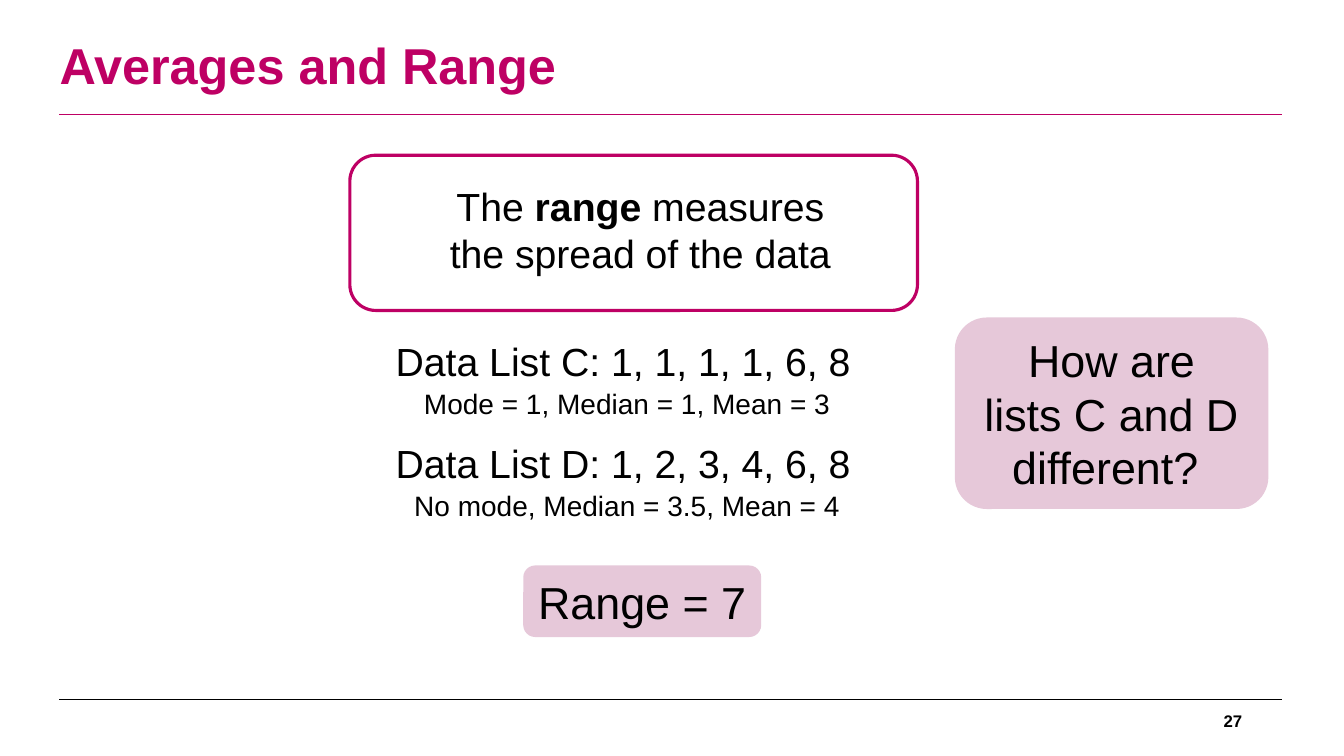
"""Build the Averages and Range slide."""
from lxml import etree
from pptx import Presentation, util as u
from pptx.dml.color import RGBColor
from pptx.enum import shapes, text
from pptx.oxml.ns import qn

MAGENTA = RGBColor(0xBE, 0x00, 0x64)
PINK = RGBColor(0xE6, 0xC8, 0xD9)
BLACK = RGBColor(0, 0, 0)
WHITE = RGBColor(255, 255, 255)
FONT = "Arial"
WIDTH, HEIGHT = 13.33, 7.5
MARGIN = 0.59

TITLE = "Averages and Range"
DEFINITION = [[("The ", False), ("range", True), (" measures", False)],
              [("the spread of the data", False)]]
DATA_LISTS = [("Data List C: 1, 1, 1, 1, 6, 8", "Mode = 1, Median = 1, Mean = 3"),
              ("Data List D: 1, 2, 3, 4, 6, 8", "No mode, Median = 3.5, Mean = 4")]
CALLOUTS = [("Range = 7", (5.19, 5.61, 2.36, 0.71)),
            ("How are\vlists C and D\vdifferent? ", (9.47, 3.15, 3.11, 1.9))]
RULES = [(1.14, MAGENTA), (6.94, BLACK)]
PAGE_NUMBER = "27"
LIST_TOP, LIST_PITCH, DETAIL_DROP = 3.35, 1.01, 0.47

CENTER, RIGHT, LEFT = text.PP_ALIGN.CENTER, text.PP_ALIGN.RIGHT, text.PP_ALIGN.LEFT
MIDDLE, TOP = text.MSO_ANCHOR.MIDDLE, text.MSO_ANCHOR.TOP


def write(shape, lines, size, color=BLACK, align=CENTER, anchor=TOP, spacing=1.0):
    frame = shape.text_frame
    frame.word_wrap = True
    frame.auto_size = text.MSO_AUTO_SIZE.NONE
    frame.vertical_anchor = anchor
    for index, runs in enumerate(lines):
        paragraph = frame.add_paragraph() if index else frame.paragraphs[0]
        paragraph.alignment = align
        paragraph.line_spacing = spacing
        for words, bold in runs:
            for part_index, part in enumerate(words.split("\v")):
                if part_index:
                    paragraph.add_line_break()
                run = paragraph.add_run()
                run.text = part
                run.font.name = FONT
                run.font.size = u.Pt(size)
                run.font.bold = bold
                run.font.color.rgb = color


def add_text(slide, box, lines, size, **options):
    write(slide.shapes.add_textbox(*map(u.Inches, box)), lines, size, **options)


def add_rounded(slide, box, fill=None, line=None):
    shape = slide.shapes.add_shape(shapes.MSO_SHAPE.ROUNDED_RECTANGLE, *map(u.Inches, box))
    shape.shadow.inherit = False
    if fill is None:
        shape.fill.background()
    else:
        shape.fill.solid()
        shape.fill.fore_color.rgb = fill
    if line is None:
        shape.line.fill.background()
    else:
        shape.line.color.rgb = line
        shape.line.width = u.Pt(2.25)
    return shape


def add_rule(slide, top, color):
    rule = slide.shapes.add_connector(
        shapes.MSO_CONNECTOR.STRAIGHT,
        *map(u.Inches, (MARGIN, top, WIDTH - MARGIN - 0.02, top)))
    rule.line.color.rgb = color
    rule.line.width = u.Pt(0.75)
    etree.SubElement(rule._element.spPr, qn("a:effectLst"))


def main():
    presentation = Presentation()
    presentation.slide_width, presentation.slide_height = u.Inches(WIDTH), u.Inches(HEIGHT)
    slide = presentation.slides.add_slide(presentation.slide_layouts[5])
    slide.background.fill.solid()
    slide.background.fill.fore_color.rgb = WHITE

    for top, color in RULES:
        add_rule(slide, top, color)
    title = slide.shapes.title
    title.left, title.top, title.width, title.height = map(u.Inches, (0.49, 0.12, 10, 1.11))
    write(title, [[(TITLE, True)]], 36, MAGENTA, LEFT, MIDDLE, 0.9)
    add_text(slide, (9.42, 6.95, 3, 0.4), [[(PAGE_NUMBER, True)]], 12,
             align=RIGHT, anchor=MIDDLE)

    add_text(slide, (4.34, 1.76, 4.02, 1.04), DEFINITION, 28)
    add_rounded(slide, (3.47, 1.54, 5.63, 1.54), line=MAGENTA)
    for row, (values, averages) in enumerate(DATA_LISTS):
        top = LIST_TOP + row * LIST_PITCH
        add_text(slide, (3.68, top, 5, 0.5), [[(values, False)]], 28, spacing=0.9)
        add_text(slide, (3.98, top + DETAIL_DROP, 4.48, 0.41), [[(averages, False)]], 20,
                 spacing=0.9)
    for words, box in CALLOUTS:
        write(add_rounded(slide, box, fill=PINK), [[(words, False)]], 32, anchor=MIDDLE)

    presentation.save("out.pptx")


if __name__ == "__main__":
    main()
